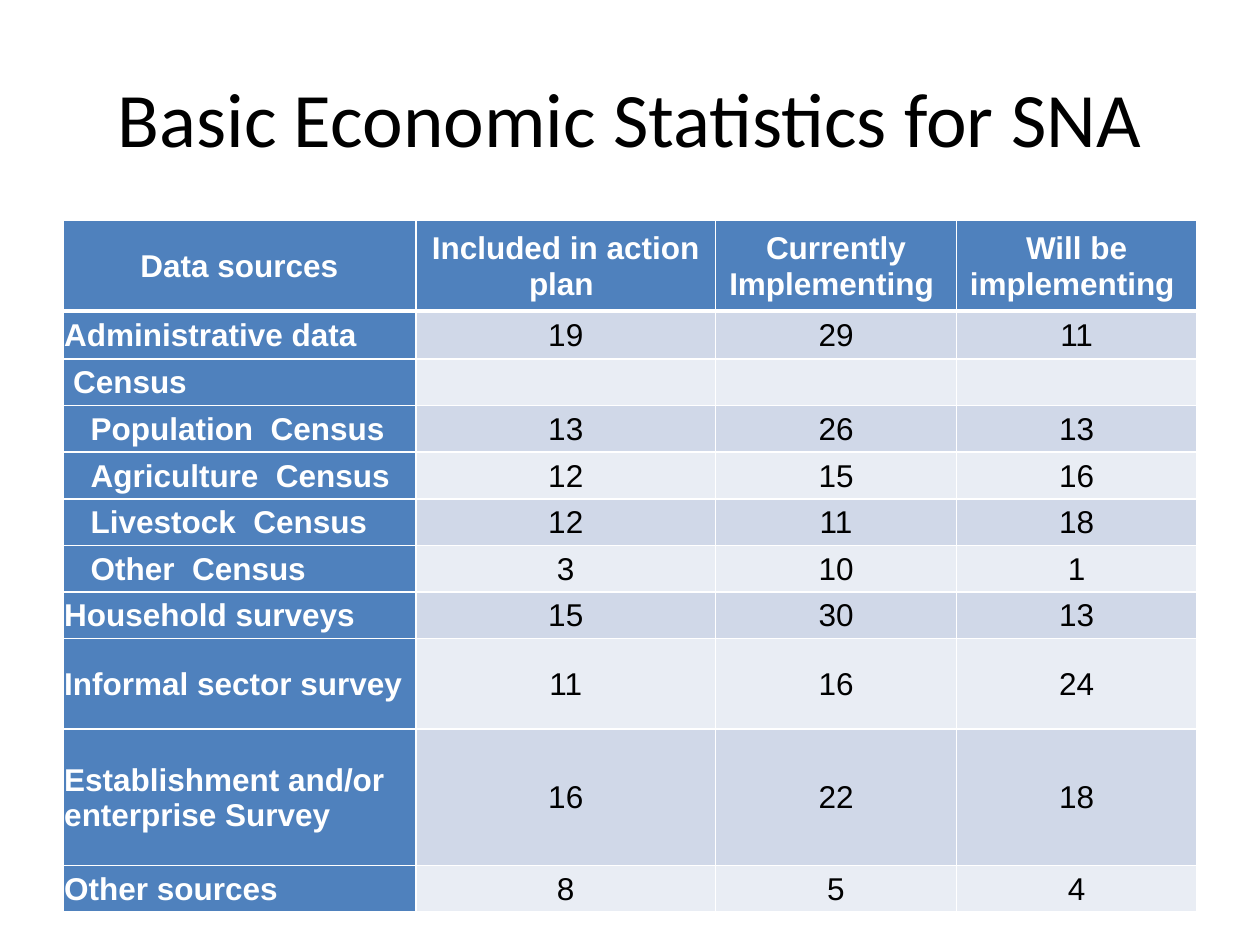
import pptx
import pptx.dml.color
import pptx.enum.text
import pptx.oxml
import pptx.oxml.ns
import pptx.util

Inches = pptx.util.Inches
Pt = pptx.util.Pt
RGBColor = pptx.dml.color.RGBColor
PP_ALIGN = pptx.enum.text.PP_ALIGN
MSO_ANCHOR = pptx.enum.text.MSO_ANCHOR

BLACK = RGBColor(0x00, 0x00, 0x00)
WHITE = RGBColor(0xFF, 0xFF, 0xFF)
BLUE = RGBColor(0x4F, 0x81, 0xBD)
BANDS = (RGBColor(0xE9, 0xED, 0xF4), RGBColor(0xD0, 0xD8, 0xE8))

INDENT = 0.07
COLUMN_WIDTHS = (2.8, 2.38, 1.91, 1.91)
HEADERS = (
    "Data sources",
    "Included in action plan ",
    "Currently Implementing ",
    "Will be implementing ",
)
HEADER_HEIGHT = 0.72
SOURCES = (
    ("Administrative data", 0, 0.38, (19, 29, 11)),
    ("Census", 1, 0.37, ("", "", "")),
    ("Population  Census", 3, 0.37, (13, 26, 13)),
    ("Agriculture  Census", 3, 0.37, (12, 15, 16)),
    ("Livestock  Census", 3, 0.37, (12, 11, 18)),
    ("Other  Census", 3, 0.37, (3, 10, 1)),
    ("Household surveys", 0, 0.37, (15, 30, 13)),
    ("Informal sector survey", 0, 0.72, (11, 16, 24)),
    ("Establishment and/or enterprise Survey", 0, 1.08, (16, 22, 18)),
    ("Other sources", 0, 0.37, (8, 5, 4)),
)


class SlideBuilder:
    title_font = "Calibri"
    table_font = "Arial"

    def __init__(self, slide):
        self.slide = slide

    def style_text(self, tf, text, font, size, color, align, bold=False):
        p = tf.paragraphs[0]
        p.text = text
        p.alignment = align
        p.font.size = Pt(size)
        for r in p.runs:
            r.font.name = font
            r.font.size = Pt(size)
            r.font.bold = bold
            r.font.color.rgb = color

    def title(self, text, left, top, width, height):
        sp = self.slide.shapes.add_textbox(
            Inches(left), Inches(top), Inches(width), Inches(height))
        tf = sp.text_frame
        tf.word_wrap = True
        tf.vertical_anchor = MSO_ANCHOR.MIDDLE
        self.style_text(tf, text, self.title_font, 44, BLACK, PP_ALIGN.CENTER)

    def borders(self, cell, top=1, bottom=1):
        tc_pr = cell._tc.get_or_add_tcPr()
        widths = {"lnL": 1, "lnR": 1, "lnT": top, "lnB": bottom}
        for i, (tag, width) in enumerate(widths.items()):
            tc_pr.insert(i, pptx.oxml.parse_xml(
                f'<a:{tag} {pptx.oxml.ns.nsdecls("a")} w="{Pt(width)}">'
                f'<a:solidFill><a:srgbClr val="{WHITE}"/></a:solidFill>'
                f'</a:{tag}>'))

    def cell(self, cell, text, fill, color, align, bold, indent=0, top=1, bottom=1):
        cell.margin_left = Inches(0.01 + indent)
        cell.margin_right = cell.margin_top = Inches(0.01)
        cell.margin_bottom = 0
        cell.vertical_anchor = MSO_ANCHOR.MIDDLE
        cell.fill.solid()
        cell.fill.fore_color.rgb = fill
        self.borders(cell, top, bottom)
        self.style_text(cell.text_frame, text, self.table_font, 18, color, align, bold)

    def table(self, left, top, widths, headers, header_height, sources):
        heights = [header_height] + [source[2] for source in sources]
        table = self.slide.shapes.add_table(
            len(heights), len(widths), Inches(left), Inches(top),
            Inches(sum(widths)), Inches(sum(heights))).table
        for column, width in zip(table.columns, widths):
            column.width = Inches(width)
        for row, height in zip(table.rows, heights):
            row.height = Inches(height)
        for col, header in enumerate(headers):
            self.cell(table.cell(0, col), header, BLUE, WHITE,
                      PP_ALIGN.CENTER, True, bottom=3)
        for row, (name, level, _, values) in enumerate(sources, 1):
            rule = 3 if row == 1 else 1
            self.cell(table.cell(row, 0), name, BLUE, WHITE,
                      PP_ALIGN.LEFT, True, indent=level * INDENT, top=rule)
            for col, value in enumerate(values, 1):
                self.cell(table.cell(row, col), str(value), BANDS[row % 2],
                          BLACK, PP_ALIGN.CENTER, False, top=rule)


def main():
    prs = pptx.Presentation()
    prs.slide_width = Inches(10)
    prs.slide_height = Inches(7.5)
    s = SlideBuilder(prs.slides.add_slide(prs.slide_layouts[6]))
    s.title("Basic Economic Statistics for SNA", 0.5, 0.3, 9, 1.25)
    s.table(0.5, 1.75, COLUMN_WIDTHS, HEADERS, HEADER_HEIGHT, SOURCES)
    prs.save("out.pptx")


if __name__ == "__main__":
    main()
